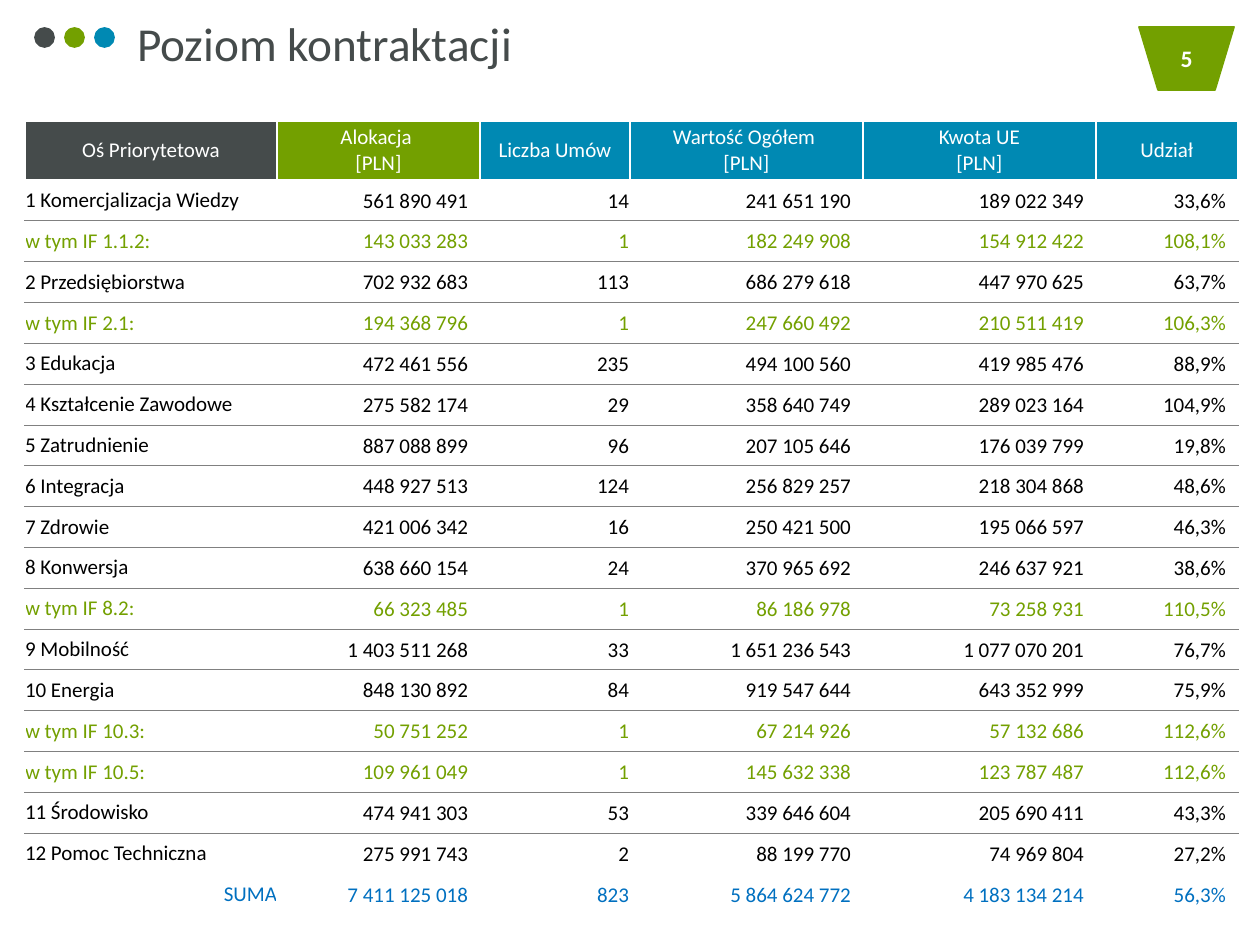
from lxml.etree import SubElement
from pptx import Presentation
from pptx.dml.color import RGBColor
from pptx.enum.shapes import MSO_SHAPE
from pptx.enum.text import MSO_ANCHOR, MSO_AUTO_SIZE, PP_ALIGN
from pptx.oxml.ns import qn
from pptx.util import Pt

EMU_PER_PX = 914400 / 126

WHITE = RGBColor(0xFF, 0xFF, 0xFF)
BLACK = RGBColor(0x00, 0x00, 0x00)
GRAPHITE = RGBColor(0x45, 0x4B, 0x4B)
GREEN = RGBColor(0x73, 0xA0, 0x00)
TEAL = RGBColor(0x00, 0x89, 0xB3)
BLUE = RGBColor(0x00, 0x70, 0xC0)
GREY = RGBColor(0x80, 0x80, 0x80)

FONT = "Calibri"
COLUMN_WIDTHS = (252, 203, 150, 233, 233, 142)
HEADER_HEIGHT = 59
HEADERS = ("Oś Priorytetowa", "Alokacja \n[PLN]", "Liczba Umów",
           "Wartość Ogółem \n[PLN]", "Kwota UE\n[PLN]", "Udział")
HEADER_FILLS = (GRAPHITE, GREEN, TEAL, TEAL, TEAL, TEAL)
COUNT_COLUMN = 2
SUBROW_PREFIX = "w tym"
AXES = (
    ("1 Komercjalizacja Wiedzy", "561 890 491", "14", "241 651 190", "189 022 349", "33,6%"),
    ("w tym IF 1.1.2:", "143 033 283", "1", "182 249 908", "154 912 422", "108,1%"),
    ("2 Przedsiębiorstwa", "702 932 683", "113", "686 279 618", "447 970 625", "63,7%"),
    ("w tym IF 2.1:", "194 368 796", "1", "247 660 492", "210 511 419", "106,3%"),
    ("3 Edukacja", "472 461 556", "235", "494 100 560", "419 985 476", "88,9%"),
    ("4 Kształcenie Zawodowe", "275 582 174", "29", "358 640 749", "289 023 164", "104,9%"),
    ("5 Zatrudnienie", "887 088 899", "96", "207 105 646", "176 039 799", "19,8%"),
    ("6 Integracja", "448 927 513", "124", "256 829 257", "218 304 868", "48,6%"),
    ("7 Zdrowie", "421 006 342", "16", "250 421 500", "195 066 597", "46,3%"),
    ("8 Konwersja", "638 660 154", "24", "370 965 692", "246 637 921", "38,6%"),
    ("w tym IF 8.2:", "66 323 485", "1", "86 186 978", "73 258 931", "110,5%"),
    ("9 Mobilność", "1 403 511 268", "33", "1 651 236 543", "1 077 070 201", "76,7%"),
    ("10 Energia", "848 130 892", "84", "919 547 644", "643 352 999", "75,9%"),
    ("w tym IF 10.3:", "50 751 252", "1", "67 214 926", "57 132 686", "112,6%"),
    ("w tym IF 10.5:", "109 961 049", "1", "145 632 338", "123 787 487", "112,6%"),
    ("11 Środowisko", "474 941 303", "53", "339 646 604", "205 690 411", "43,3%"),
    ("12 Pomoc Techniczna", "275 991 743", "2", "88 199 770", "74 969 804", "27,2%"),
)
TOTAL = ("SUMA", "7 411 125 018", "823", "5 864 624 772", "4 183 134 214", "56,3%")

WHITE_EDGE = (WHITE, 1)
GREY_EDGE = (GREY, 0.5)


def px(length):
    return round(length * EMU_PER_PX)


def set_all(target, formats):
    for attribute, value in formats.items():
        setattr(target, attribute, value)


def write(paragraph, text, size, color, align, bold=False):
    paragraph.text = text
    paragraph.alignment = align
    for run in paragraph.runs:
        set_all(run.font, {"name": FONT, "size": Pt(size), "bold": bold})
        run.font.color.rgb = color
    for line_break in paragraph._p.findall(qn("a:br")):
        SubElement(line_break, qn("a:rPr"), sz=str(int(size * 100)))


def add_flat_shape(shapes, preset, box, color):
    shape = shapes.add_shape(preset, *map(px, box))
    shape.shadow.inherit = False
    shape.fill.solid()
    shape.fill.fore_color.rgb = color
    shape.line.color.rgb = color
    shape.line.width = Pt(1)
    return shape


def add_dots(slide, left, top, diameter, step):
    dots = slide.shapes.add_group_shape().shapes
    for index, color in enumerate((GRAPHITE, GREEN, TEAL)):
        box = (left + index * step, top, diameter, diameter)
        add_flat_shape(dots, MSO_SHAPE.OVAL, box, color)


def add_page_badge(slide, box, number):
    badge = add_flat_shape(slide.shapes, MSO_SHAPE.FLOWCHART_MANUAL_OPERATION, box, GREEN)
    badge.text_frame.vertical_anchor = MSO_ANCHOR.MIDDLE
    write(badge.text_frame.paragraphs[0], number, 13.5, WHITE, PP_ALIGN.CENTER, bold=True)


def place_title(slide, box, text):
    title = slide.shapes.title
    set_all(title, dict(zip(("left", "top", "width", "height"), map(px, box))))
    set_all(title.text_frame, {
        "margin_left": 0, "margin_top": 0, "margin_right": 0, "margin_bottom": 0,
        "word_wrap": False, "auto_size": MSO_AUTO_SIZE.SHAPE_TO_FIT_TEXT,
        "vertical_anchor": MSO_ANCHOR.TOP})
    write(title.text_frame.paragraphs[0], text, 27, GRAPHITE, PP_ALIGN.LEFT)


def draw_borders(cell, top, bottom):
    properties = cell._tc.get_or_add_tcPr()
    edges = {"a:lnL": WHITE_EDGE, "a:lnR": WHITE_EDGE, "a:lnT": top, "a:lnB": bottom}
    for tag, (color, width) in edges.items():
        line = SubElement(properties, qn(tag), w=str(Pt(width)))
        SubElement(SubElement(line, qn("a:solidFill")), qn("a:srgbClr"), val=str(color))


def fill_cell(cell, text, color, align, margins, top, bottom, background=None):
    names = ("margin_left", "margin_top", "margin_right", "margin_bottom")
    set_all(cell, dict(zip(names, map(px, margins))))
    cell.vertical_anchor = MSO_ANCHOR.MIDDLE
    draw_borders(cell, top, bottom)
    if background is None:
        cell.fill.background()
    else:
        cell.fill.solid()
        cell.fill.fore_color.rgb = background
    write(cell.text_frame.paragraphs[0], text, 12, color, align)


def fill_body_row(cells, values, color, label_align, top, bottom):
    for column, (cell, value) in enumerate(zip(cells, values)):
        if column == 0:
            align, margins = label_align, (0, 0, 0, 0)
        else:
            align = PP_ALIGN.RIGHT
            margins = (1, 1, 1 if column == COUNT_COLUMN else 12, 0)
        fill_cell(cell, value, color, align, margins, top, bottom)


def add_contract_table(slide, left, top, height):
    body_rows = len(AXES) + 1
    table = slide.shapes.add_table(
        body_rows + 1, len(HEADERS),
        px(left), px(top), px(sum(COLUMN_WIDTHS)), px(height)).table
    set_all(table, {"first_row": False, "horz_banding": False})
    for column, width in zip(table.columns, COLUMN_WIDTHS):
        column.width = px(width)
    header, *body = table.rows
    header.height = px(HEADER_HEIGHT)
    for row in body:
        row.height = px((height - HEADER_HEIGHT) / body_rows)

    for cell, text, background in zip(header.cells, HEADERS, HEADER_FILLS):
        fill_cell(cell, text, WHITE, PP_ALIGN.CENTER, (0, 0, 0, 0),
                  WHITE_EDGE, WHITE_EDGE, background)
    *axis_rows, total_row = body
    for index, (row, values) in enumerate(zip(axis_rows, AXES)):
        fill_body_row(row.cells, values,
                      GREEN if values[0].startswith(SUBROW_PREFIX) else BLACK,
                      PP_ALIGN.LEFT,
                      WHITE_EDGE if index == 0 else GREY_EDGE,
                      WHITE_EDGE if index == len(AXES) - 1 else GREY_EDGE)
    fill_body_row(total_row.cells, TOTAL, BLUE, PP_ALIGN.RIGHT, WHITE_EDGE, WHITE_EDGE)


def main():
    presentation = Presentation()
    set_all(presentation, {"slide_width": px(1260), "slide_height": px(945)})
    slide = presentation.slides.add_slide(presentation.slide_layouts[5])
    add_page_badge(slide, (1139, 27, 95, 63), "5")
    add_dots(slide, left=35, top=28, diameter=19, step=30)
    place_title(slide, (137, 14, 378, 57), "Poziom kontraktacji")
    add_contract_table(slide, left=25, top=121, height=794)
    presentation.save("out.pptx")


if __name__ == "__main__":
    main()
